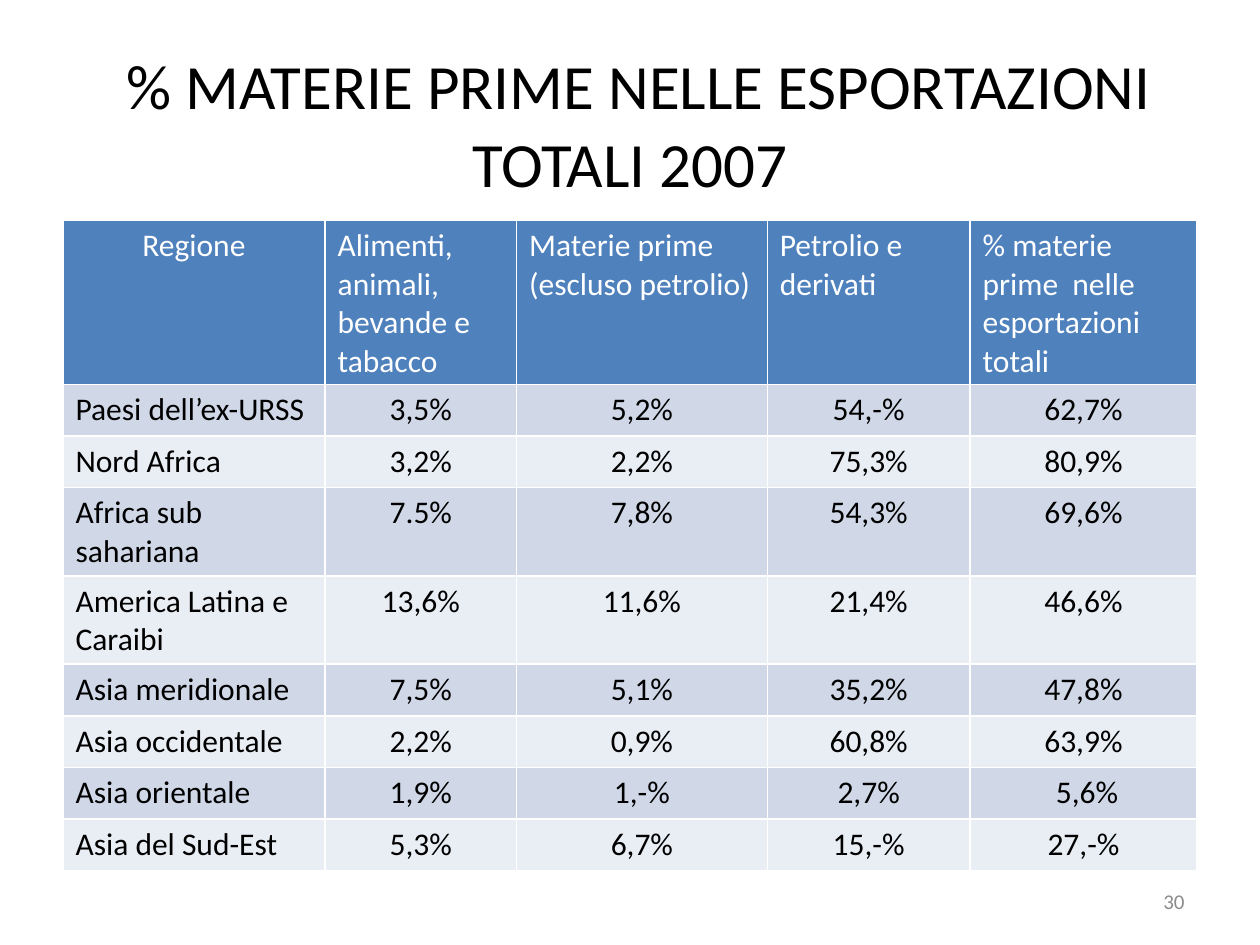
import lxml.etree
import pptx
import pptx.dml.color
import pptx.enum.text
import pptx.oxml.ns
import pptx.util

Inches = pptx.util.Inches
Pt = pptx.util.Pt
RGBColor = pptx.dml.color.RGBColor
Align = pptx.enum.text.PP_ALIGN
Anchor = pptx.enum.text.MSO_ANCHOR
qn = pptx.oxml.ns.qn

BLACK = RGBColor(0x00, 0x00, 0x00)
WHITE = RGBColor(0xFF, 0xFF, 0xFF)
GREY = RGBColor(0x8C, 0x8C, 0x8C)
HEADER_BLUE = RGBColor(0x4F, 0x81, 0xBD)
BANDS = (RGBColor(0xD0, 0xD8, 0xE8), RGBColor(0xE9, 0xED, 0xF4))

COLUMN_WIDTHS = (2.08, 1.52, 1.99, 1.61, 1.8)
ROW_HEIGHTS = (1.3, 0.41, 0.41, 0.7, 0.7, 0.41, 0.41, 0.41, 0.41)
EXPORT_ROWS = (
    ("Regione", "Alimenti, animali, bevande e tabacco",
     "Materie prime (escluso petrolio)", "Petrolio e derivati",
     "% materie prime  nelle esportazioni totali"),
    ("Paesi dell’ex-URSS", "3,5%", "5,2%", "54,-%", "62,7%"),
    ("Nord Africa", "3,2%", "2,2%", "75,3%", "80,9%"),
    ("Africa sub sahariana", "7.5%", "7,8%", "54,3%", "69,6%"),
    ("America Latina e Caraibi", "13,6%", "11,6%", "21,4%", "46,6%"),
    ("Asia meridionale", "7,5%", "5,1%", "35,2%", "47,8%"),
    ("Asia occidentale", "2,2%", "0,9%", "60,8%", "63,9%"),
    ("Asia orientale", "1,9%", "1,-%", "2,7%", " 5,6%"),
    ("Asia del Sud-Est", "5,3%", "6,7%", "15,-%", "27,-%"),
)


def add_run(paragraph, text, size, color):
    run = paragraph.add_run()
    run.text = text
    font_format = {"name": "Calibri", "size": Pt(size), "bold": False}
    for name, value in font_format.items():
        setattr(run.font, name, value)
    run.font.color.rgb = color


def add_text(slide, box, runs, color, alignment):
    """Place one paragraph, made of (text, size) runs, centred vertically."""
    text_frame = slide.shapes.add_textbox(*box).text_frame
    frame_format = {"word_wrap": True, "vertical_anchor": Anchor.MIDDLE}
    for name, value in frame_format.items():
        setattr(text_frame, name, value)
    paragraph = text_frame.paragraphs[0]
    paragraph.alignment = alignment
    for text, size in runs:
        add_run(paragraph, text, size, color)


def add_title(slide, box):
    runs = ((" ", 44), ("% MATERIE PRIME NELLE ESPORTAZIONI TOTALI 2007", 36))
    add_text(slide, box, runs, BLACK, Align.CENTER)


def add_slide_number(slide, box):
    add_text(slide, box, (("30", 12),), GREY, Align.RIGHT)


def set_borders(cell, color, width):
    properties = cell._tc.get_or_add_tcPr()
    for side in ("lnL", "lnR", "lnT", "lnB"):
        line = lxml.etree.SubElement(properties, qn(f"a:{side}"), w=str(width))
        fill = lxml.etree.SubElement(line, qn("a:solidFill"))
        lxml.etree.SubElement(fill, qn("a:srgbClr"), val=str(color))


def fill_cell(cell, text, fill_color, text_color, alignment):
    set_borders(cell, WHITE, Pt(1))
    cell.fill.solid()
    cell.fill.fore_color.rgb = fill_color
    paragraph = cell.text_frame.paragraphs[0]
    paragraph.alignment = alignment
    add_run(paragraph, text, 18, text_color)


def add_export_table(slide, box):
    table = slide.shapes.add_table(
        len(EXPORT_ROWS), len(COLUMN_WIDTHS), *box).table
    for column, width in zip(table.columns, COLUMN_WIDTHS):
        column.width = Inches(width)
    for row, height in zip(table.rows, ROW_HEIGHTS):
        row.height = Inches(height)

    for row_index, texts in enumerate(EXPORT_ROWS):
        is_header = row_index == 0
        fill_color = HEADER_BLUE if is_header else BANDS[(row_index - 1) % 2]
        text_color = WHITE if is_header else BLACK
        for column_index, text in enumerate(texts):
            is_centred = is_header == (column_index == 0)
            fill_cell(table.cell(row_index, column_index), text, fill_color,
                      text_color, Align.CENTER if is_centred else Align.LEFT)


def main():
    presentation = pptx.Presentation()
    presentation.slide_width = Inches(10)
    presentation.slide_height = Inches(7.5)
    slide = presentation.slides.add_slide(presentation.slide_layouts[6])

    add_title(slide, (Inches(0.5), Inches(0.3), Inches(9), Inches(1.25)))
    add_export_table(
        slide, (Inches(0.5), Inches(1.75), Inches(9), Inches(5.13)))
    add_slide_number(
        slide, (Inches(7.17), Inches(6.95), Inches(2.33), Inches(0.4)))
    presentation.save("out.pptx")


if __name__ == "__main__":
    main()
